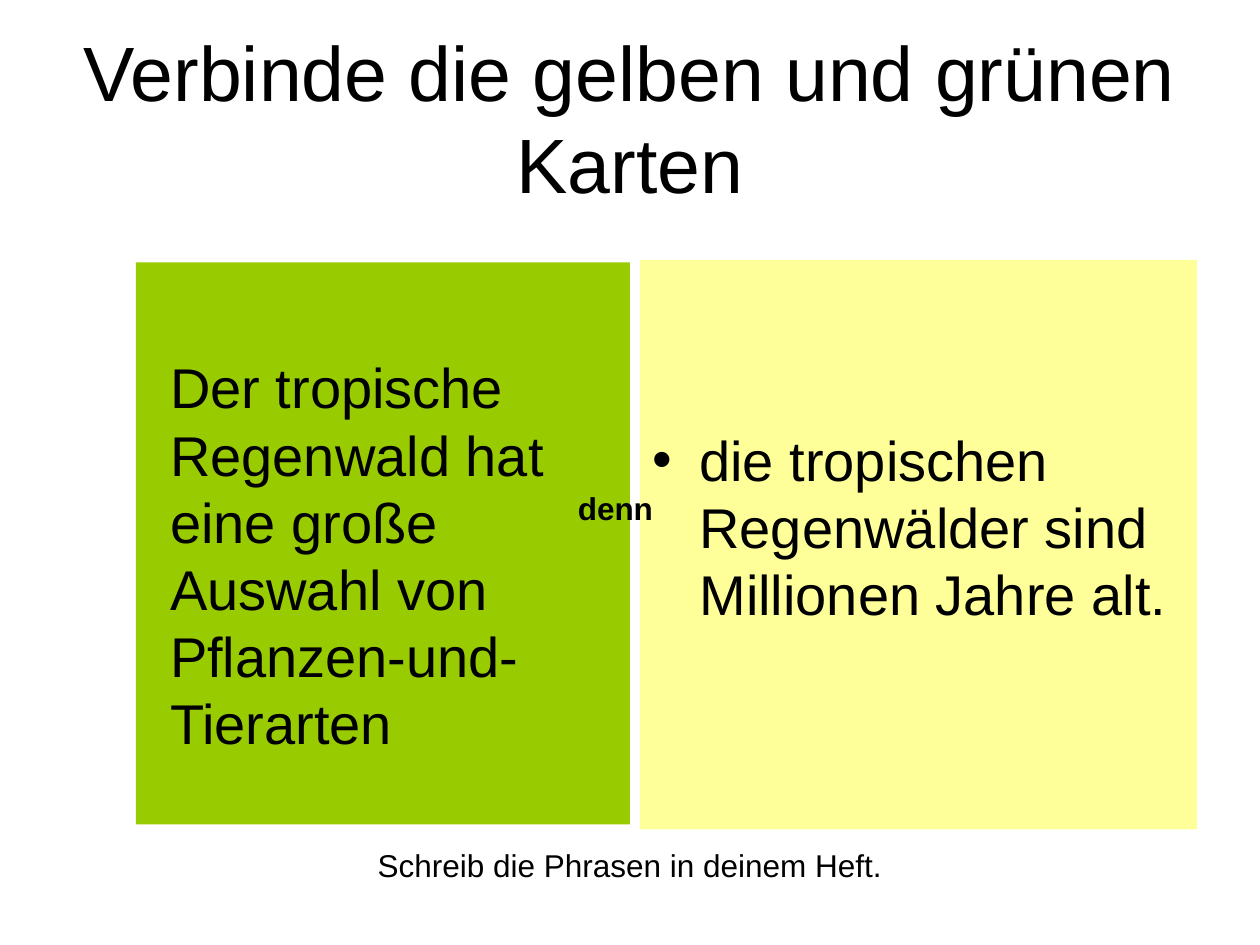
from pptx import Presentation
from pptx.dml.color import RGBColor
from pptx.enum.shapes import MSO_SHAPE
from pptx.enum.text import MSO_ANCHOR, PP_ALIGN
from pptx.oxml.ns import qn
from pptx.util import Cm, Pt
from lxml import etree

COLORS = {"text": "000000", "green": "99CC00", "yellow": "FFFF99"}
FONT = "Arial"


def fill_text(frame, text, size, align=PP_ALIGN.LEFT, bold=False, bullet=False):
    frame.word_wrap = True
    paragraph = frame.paragraphs[0]
    paragraph.alignment = align
    if bullet:
        properties = paragraph._p.get_or_add_pPr()
        properties.set("marL", str(Cm(0.95)))
        properties.set("indent", str(-Cm(0.95)))
        etree.SubElement(properties, qn("a:buFont"), typeface=FONT)
        etree.SubElement(properties, qn("a:buChar"), char="•")
    run = paragraph.add_run()
    run.text = text
    run.font.name = FONT
    run.font.size = Pt(size)
    run.font.bold = bold
    run.font.color.rgb = RGBColor.from_string(COLORS["text"])


def add_label(slide, box, text, size, anchor=MSO_ANCHOR.TOP, **style):
    label = slide.shapes.add_textbox(*(Cm(length) for length in box))
    label.text_frame.vertical_anchor = anchor
    fill_text(label.text_frame, text, size, **style)


def add_card(slide, box, color):
    card = slide.shapes.add_shape(MSO_SHAPE.RECTANGLE, *(Cm(length) for length in box))
    card.shadow.inherit = False
    card.fill.solid()
    card.fill.fore_color.rgb = RGBColor.from_string(COLORS[color])
    card.line.fill.background()
    return card


def add_reason_card(slide, box):
    reason = add_card(slide, box, "yellow").text_frame
    reason.vertical_anchor = MSO_ANCHOR.TOP
    reason.margin_top = Cm(3.33)
    fill_text(reason, "die tropischen Regenwälder sind Millionen Jahre alt.", 32, bullet=True)


def add_statement_card(slide, box):
    left, top, width, height = box
    add_card(slide, box, "green")
    add_label(
        slide,
        (left + 0.44, top + 1.7, width - 1.5, height - 2.95),
        "Der tropische Regenwald hat eine große Auswahl von Pflanzen-und- Tierarten",
        32,
    )


def build_matching_slide(slide):
    add_label(slide, (1.27, 0.76, 22.86, 3.18), "Verbinde die gelben und grünen Karten",
              44, anchor=MSO_ANCHOR.MIDDLE, align=PP_ALIGN.CENTER)
    add_reason_card(slide, (12.9, 5.24, 11.23, 11.48))
    add_statement_card(slide, (2.74, 5.29, 9.96, 11.33))
    add_label(slide, (11.4, 9.73, 2.08, 1.02), "denn", 18, bold=True)
    add_label(slide, (2.96, 16.93, 19.47, 1.02), "Schreib die Phrasen in deinem Heft.",
              18, align=PP_ALIGN.CENTER)


def main():
    presentation = Presentation()
    presentation.slide_width = Cm(25.4)
    presentation.slide_height = Cm(19.05)
    build_matching_slide(presentation.slides.add_slide(presentation.slide_layouts[6]))
    presentation.save("out.pptx")


if __name__ == "__main__":
    main()
